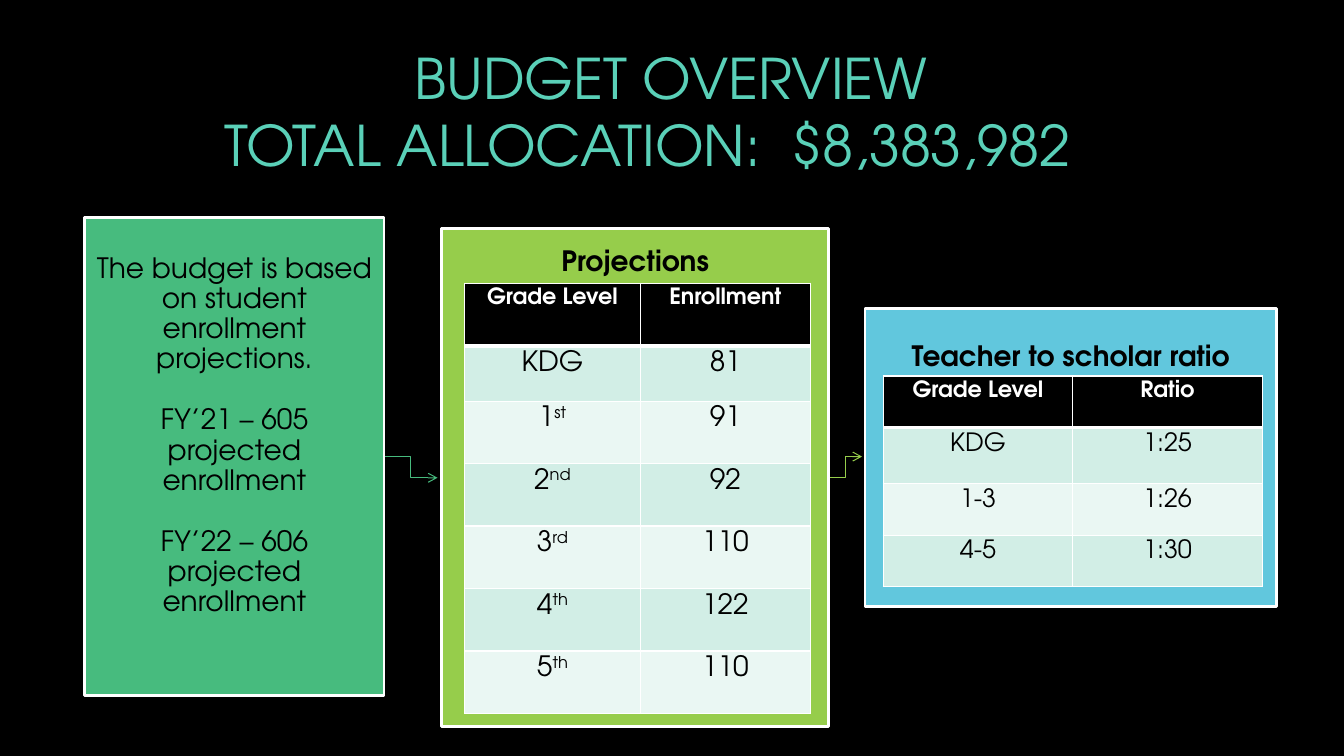
from lxml import etree
from pptx import Presentation
from pptx.dml.color import RGBColor
from pptx.enum.shapes import MSO_CONNECTOR, MSO_SHAPE
from pptx.enum.text import MSO_ANCHOR, PP_ALIGN
from pptx.oxml import parse_xml
from pptx.oxml.ns import nsdecls, qn
from pptx.util import Inches, Pt

FONT = "TeX Gyre Adventor"
BLACK = RGBColor(0x00, 0x00, 0x00)
WHITE = RGBColor(0xFF, 0xFF, 0xFF)
TEAL = RGBColor(0x5A, 0xD0, 0xB8)
GREEN = RGBColor(0x47, 0xBB, 0x7E)
LIME = RGBColor(0x96, 0xCD, 0x4B)
BLUE = RGBColor(0x61, 0xC7, 0xDD)
BAND_DARK = RGBColor(0xD2, 0xEE, 0xE6)
BAND_LIGHT = RGBColor(0xEA, 0xF7, 0xF3)


def style_paragraph(paragraph, size, color, bold=False):
    paragraph.alignment = PP_ALIGN.CENTER
    paragraph.font.name = FONT
    paragraph.font.size = Pt(size)
    paragraph.font.bold = bold
    paragraph.font.color.rgb = color


def add_grid(left, top, widths, heights, rows, body_size):
    """Banded table with a black header; a cell may be (number, superscript)."""
    grid = slide.shapes.add_table(
        len(rows), len(widths), Inches(left), Inches(top),
        Inches(sum(widths)), Inches(sum(heights))).table
    for column, width in zip(grid.columns, widths):
        column.width = Inches(width)
    for r, (row, height) in enumerate(zip(rows, heights)):
        grid.rows[r].height = Inches(height)
        for c, content in enumerate(row):
            cell = grid.cell(r, c)
            cell.margin_top = Inches(0.05)
            cell.margin_bottom = 0
            borders = {"lnL": 1, "lnR": 1, "lnT": 3 if r == 1 else 1, "lnB": 3 if r == 0 else 1}
            for side, points in borders.items():
                cell._tc.get_or_add_tcPr().append(parse_xml(
                    f'<a:{side} {nsdecls("a")} w="{Pt(points)}"><a:solidFill>'
                    f'<a:srgbClr val="{WHITE}"/></a:solidFill></a:{side}>'))
            cell.fill.solid()
            cell.fill.fore_color.rgb = BLACK if r == 0 else BAND_DARK if r % 2 else BAND_LIGHT
            paragraph = cell.text_frame.paragraphs[0]
            if r == 0:
                style_paragraph(paragraph, 16, WHITE, bold=True)
            else:
                style_paragraph(paragraph, body_size, BLACK)
            number, *suffix = content if isinstance(content, tuple) else (content,)
            paragraph.add_run().text = number
            for ending in suffix:
                superscript = paragraph.add_run()
                superscript.text = ending
                superscript.font._element.set("baseline", "30000")


presentation = Presentation()
presentation.slide_width = Inches(13.33)
presentation.slide_height = Inches(7.5)
slide = presentation.slides.add_slide(presentation.slide_layouts[6])
slide.background.fill.solid()
slide.background.fill.fore_color.rgb = BLACK

# Title: the first line is indented so that it sits right of the second
title = slide.shapes.add_textbox(Inches(1.69), Inches(0.15), Inches(9.47), Inches(1.9)).text_frame
title.word_wrap = True
title.vertical_anchor = MSO_ANCHOR.MIDDLE
title.text = "BUDGET OVERVIEW\nTOTAL ALLOCATION:  $8,383,982"
for line in title.paragraphs:
    style_paragraph(line, 40, TEAL)
title.paragraphs[0]._p.get_or_add_pPr().set("marL", str(Inches(0.46)))

# Arrows between the panels
for x1, y1, x2, y2, color in [(3.81, 4.53, 4.34, 4.74, GREEN), (8.22, 4.74, 8.55, 4.53, LIME)]:
    arrow = slide.shapes.add_connector(
        MSO_CONNECTOR.ELBOW, Inches(x1), Inches(y1), Inches(x2), Inches(y2))
    arrow.line.color.rgb = color
    arrow.line.width = Pt(0.75)
    etree.SubElement(arrow.line._get_or_add_ln(), qn("a:tailEnd"), type="arrow")
    etree.SubElement(arrow._element.spPr, qn("a:effectLst"))

# Panels: left, top, width, height, fill, top inset, bold, text
basis = ("The budget is based on student enrollment projections.\n"
         "FY’21 – 605 projected enrollment\n"
         "FY’22 – 606 projected enrollment")
panels = [
    (0.84, 2.16, 2.97, 4.74, GREEN, 0.36, False, basis),
    (4.38, 2.27, 3.84, 4.94, LIME, 0.18, True, "Projections"),
    (8.58, 3.06, 4.08, 2.96, BLUE, 0.34, True, "Teacher to scholar ratio"),
]
for left, top, width, height, color, inset, bold, text in panels:
    panel = slide.shapes.add_shape(
        MSO_SHAPE.RECTANGLE, Inches(left), Inches(top), Inches(width), Inches(height))
    panel.shadow.inherit = False
    panel.fill.solid()
    panel.fill.fore_color.rgb = color
    panel.line.color.rgb = WHITE
    panel.line.width = Pt(2)
    frame = panel.text_frame
    frame.word_wrap = True
    frame.vertical_anchor = MSO_ANCHOR.TOP
    frame.margin_top = Inches(inset)
    frame.margin_left = frame.margin_right = Inches(0.1)
    frame.text = text
    for paragraph in frame.paragraphs:
        style_paragraph(paragraph, 20, BLACK, bold)
        paragraph.line_spacing = 0.9
        paragraph.space_after = Pt(22)

add_grid(8.76, 3.73, [1.88, 1.88], [0.51, 0.56, 0.51, 0.51], [
    ("Grade Level", "Ratio"),
    ("KDG", "1:25"),
    ("1-3", "1:26"),
    ("4-5", "1:30"),
], 18)

add_grid(4.61, 2.81, [1.74, 1.69], [0.62, 0.55] + [0.62] * 5, [
    ("Grade Level", "Enrollment"),
    ("KDG", "81"),
    (("1", "st"), "91"),
    (("2", "nd"), "92"),
    (("3", "rd"), "110"),
    (("4", "th"), "122"),
    (("5", "th"), "110"),
], 20)

presentation.save("out.pptx")
